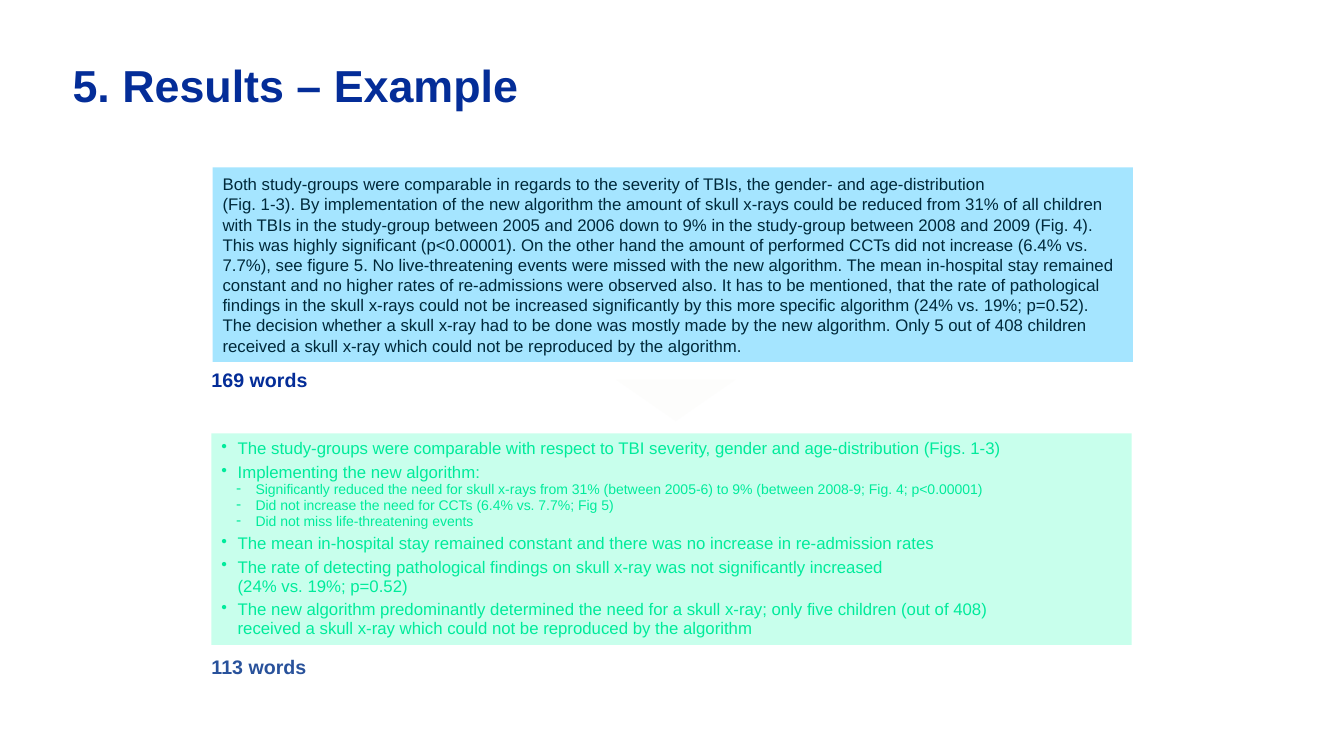
import copy

import pptx
import pptx.dml.color
import pptx.enum.shapes
import pptx.enum.text
import pptx.oxml.ns
import pptx.util
import lxml.etree

Cm = pptx.util.Cm
Pt = pptx.util.Pt
RGBColor = pptx.dml.color.RGBColor
qn = pptx.oxml.ns.qn
SHAPE = pptx.enum.shapes.MSO_SHAPE
ANCHOR = pptx.enum.text.MSO_ANCHOR
ALIGN = pptx.enum.text.PP_ALIGN

NAVY = RGBColor(0x04, 0x2D, 0x98)
STEEL = RGBColor(0x29, 0x52, 0x9B)
INK = RGBColor(0x00, 0x29, 0x3A)
GREEN = RGBColor(0x00, 0xEB, 0x9B)
SKY = RGBColor(0xA5, 0xE5, 0xFF)
MINT = RGBColor(0xC8, 0xFF, 0xEC)
OFF_WHITE = RGBColor(0xFD, 0xFD, 0xFC)


def write(frame, text, size=12, color=INK, bold=False, spacing=None, after=0, bullet=None, level=0):
    paragraph = frame.paragraphs[0]
    if paragraph.runs:
        paragraph = frame.add_paragraph()
    paragraph.text = text
    paragraph.alignment = ALIGN.LEFT
    if bullet:
        margin, hanging = [(0.41, 0.41), (0.86, 0.48)][level]
        properties = paragraph._p.get_or_add_pPr()
        properties.set("marL", str(Cm(margin)))
        properties.set("indent", str(-Cm(hanging)))
        lxml.etree.SubElement(properties, qn("a:buChar")).set("char", bullet)
        paragraph.level = level
    if spacing:
        paragraph.line_spacing = spacing
    paragraph.space_after = Pt(after)
    for run in paragraph.runs:
        run.font.name = "Arial"
        run.font.size = Pt(size)
        run.font.bold = bold
        run.font.color.rgb = color
    for line_break in paragraph._p.findall(qn("a:br")):
        line_break.append(copy.deepcopy(paragraph.runs[0].font._element))


def add_filled(kind, left, top, width, height, fill):
    shape = slide.shapes.add_shape(kind, Cm(left), Cm(top), Cm(width), Cm(height))
    shape.shadow.inherit = False
    shape.fill.solid()
    shape.fill.fore_color.rgb = fill
    shape.line.fill.background()
    shape.text_frame.word_wrap = True
    shape.text_frame.vertical_anchor = ANCHOR.MIDDLE
    return shape


presentation = pptx.Presentation()
presentation.slide_width = Cm(33.87)
presentation.slide_height = Cm(19.05)
slide = presentation.slides.add_slide(presentation.slide_layouts[6])

headings = [
    ("5. Results – Example", 1.83, 1.45, 30.2, 2.69, 32, NAVY, None),
    ("169 words", 5.33, 9.32, 5.41, 0.94, 14, NAVY, 0.95),
    ("113 words", 5.33, 16.54, 3.4, 0.99, 14, STEEL, 0.95),
]
for text, left, top, width, height, size, color, spacing in headings:
    frame = slide.shapes.add_textbox(Cm(left), Cm(top), Cm(width), Cm(height)).text_frame
    frame.word_wrap = True
    frame.margin_left = frame.margin_right = frame.margin_top = frame.margin_bottom = 0
    write(frame, text, size=size, color=color, bold=True, spacing=spacing)

long_version = add_filled(SHAPE.RECTANGLE, 5.36, 4.22, 23.19, 4.9, SKY)
sentences = [
    "Both study-groups were comparable in regards to the severity of TBIs, the gender- and age-distribution\v"
    "(Fig. 1-3).",
    "By implementation of the new algorithm the amount of skull x-rays could be reduced from 31% of all children "
    "with TBIs in the study-group between 2005 and 2006 down to 9% in the study-group between 2008 and 2009 (Fig. 4).",
    "This was highly significant (p<0.00001).",
    "On the other hand the amount of performed CCTs did not increase (6.4% vs. 7.7%), see figure 5.",
    "No live-threatening events were missed with the new algorithm.",
    "The mean in-hospital stay remained constant and no higher rates of re-admissions were observed also.",
    "It has to be mentioned, that the rate of pathological findings in the skull x-rays could not be increased "
    "significantly by this more specific algorithm (24% vs. 19%; p=0.52).",
    "The decision whether a skull x-ray had to be done was mostly made by the new algorithm.",
    "Only 5 out of 408 children received a skull x-ray which could not be reproduced by the algorithm.",
]
write(long_version.text_frame, " ".join(sentences), after=3)

short_version = add_filled(SHAPE.RECTANGLE, 5.33, 10.92, 23.19, 5.33, MINT)
points = [
    (0, 3, "The study-groups were comparable with respect to TBI severity, gender and age-distribution (Figs. 1-3)"),
    (0, 0, "Implementing the new algorithm:"),
    (1, 0, "Significantly reduced the need for skull x-rays from 31% (between 2005-6) to 9% "
           "(between 2008-9; Fig. 4; p<0.00001)"),
    (1, 0, "Did not increase the need for CCTs (6.4% vs. 7.7%; Fig 5)"),
    (1, 3, "Did not miss life-threatening events"),
    (0, 3, "The mean in-hospital stay remained constant and there was no increase in re-admission rates"),
    (0, 3, "The rate of detecting pathological findings on skull x-ray was not significantly increased\v"
           "(24% vs. 19%; p=0.52)"),
    (0, 3, "The new algorithm predominantly determined the need for a skull x-ray; only five children (out of 408)\v"
           "received a skull x-ray which could not be reproduced by the algorithm"),
]
for level, after, text in points:
    write(short_version.text_frame, text, size=[12, 10][level], color=GREEN, spacing=0.95,
          after=after, bullet="•-"[level], level=level)

arrow = add_filled(SHAPE.PENTAGON, 16.51, 8.59, 1.04, 3, OFF_WHITE)
arrow.adjustments[0] = 1
arrow.rotation = 90

presentation.save("out.pptx")
